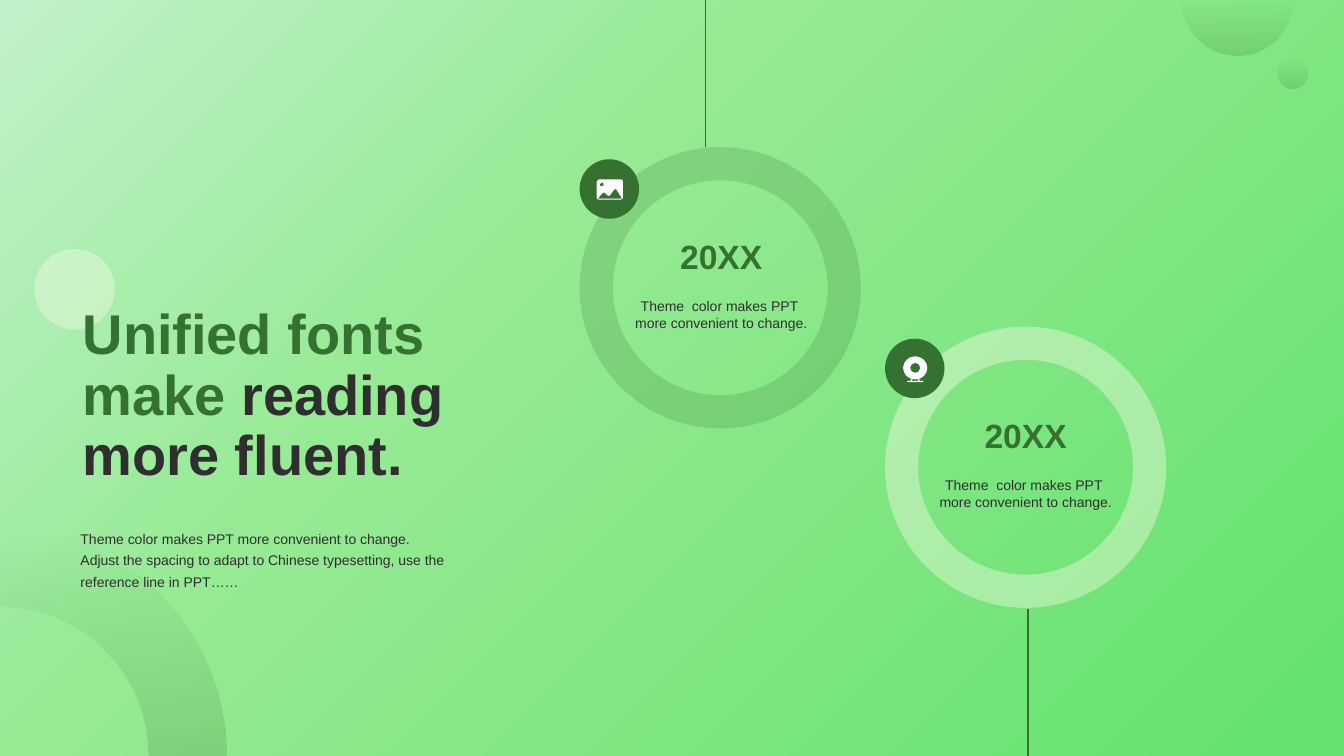
from copy import deepcopy
from dataclasses import dataclass
from math import cos, radians, sin

from lxml.etree import SubElement
from pptx import Presentation
from pptx.dml.color import RGBColor
from pptx.enum.shapes import MSO_CONNECTOR, MSO_SHAPE
from pptx.enum.text import MSO_ANCHOR, MSO_AUTO_SIZE, PP_ALIGN
from pptx.oxml.ns import qn
from pptx.util import Inches, Pt

Point = tuple[float, float]


@dataclass(frozen=True)
class Theme:
    font: str = "Arial"
    green: str = "357131"
    cream: str = "FAFBE8"
    ink: str = "2F2F2F"
    white: str = "FFFFFF"
    backdrop: tuple = ((0, "C0F1CA"), (0.37, "96EA94"), (0.98, "64E26D"))
    title_size: int = 40
    year_size: int = 24
    body_size: int = 10


THEME = Theme()


@dataclass(frozen=True)
class Contour:
    """A start and segments: one point makes a line, three make a Bezier curve."""
    start: Point
    segments: list[list[Point]]


@dataclass(frozen=True)
class Milestone:
    left: float
    top: float
    text_left: float
    ring_color: str
    ring_alpha: int
    icon: list[Contour]
    line_x: float
    line_top: float
    line_bottom: float


# Outlines
def arc(x: float, y: float, rx: float, ry: float, start: int = 0, quarters: int = 4) -> Contour:
    turn = 1 if quarters > 0 else -1
    pull = 0.5523 * turn

    def at(angle: int, tangent: float = 0) -> Point:
        c, s = cos(radians(angle)), sin(radians(angle))
        return x + rx * (c - tangent * s), y + ry * (s + tangent * c)

    angles = [start + 90 * turn * i for i in range(abs(quarters))]
    return Contour(at(start), [[at(a, pull), at(a + 90 * turn, -pull), at(a + 90 * turn)]
                               for a in angles])


def polygon(*points: Point) -> Contour:
    return Contour(points[0], [[point] for point in points[1:]])


def join(first: Contour, *others: Contour) -> Contour:
    segments = list(first.segments)
    for other in others:
        segments += [[other.start], *other.segments]
    return Contour(first.start, segments)


def rounded(half_width: float, half_height: float, r: float) -> Contour:
    x, y = half_width - r, half_height - r
    corners = ((x, y), (-x, y), (-x, -y), (x, -y))
    return join(*(arc(cx, cy, r, r, 90 * i, 1) for i, (cx, cy) in enumerate(corners)))


# Icon contours are relative to the centre of the badge; inner ones are holes
MOUNTAINS = polygon((-0.11, 0.09), (-0.11, 0.08), (-0.07, 0.035), (-0.055, 0.03),
                    (-0.015, 0.063), (0, 0.06), (0.045, 0), (0.055, -0.004),
                    (0.065, 0), (0.115, 0.08), (0.115, 0.09))
STAND = polygon((-0.035, 0.1), (-0.05, 0.12), (-0.08, 0.12), (-0.08, 0.13),
                (0.08, 0.13), (0.08, 0.12), (0.05, 0.12), (0.035, 0.1),
                (0.025, 0.1), (0.035, 0.12), (-0.035, 0.12), (-0.025, 0.1))
PHOTO_ICON = [rounded(0.13, 0.1, 0.02), MOUNTAINS, arc(-0.08, -0.05, 0.02, 0.02)]
CAMERA_ICON = [arc(0, -0.01, 0.12, 0.115), STAND, arc(0, -0.01, 0.05, 0.05),
               arc(0.06, -0.07, 0.005, 0.005)]

MILESTONES = [
    Milestone(5.75, 1.46, 6.26, THEME.green, 20, PHOTO_ICON, 7, 0, 1.46),
    Milestone(8.78, 3.24, 9.28, THEME.cream, 40, CAMERA_ICON, 10.2, 6.04, 7.5),
]


# Fills
def set_alpha(color, percent: int) -> None:
    SubElement(color, qn("a:alpha")).set("val", str(percent * 1000))


def fill_solid(shape, color: str, alpha: int = 100) -> None:
    shape.shadow.inherit = False
    shape.line.fill.background()
    shape.fill.solid()
    shape.fill.fore_color.rgb = RGBColor.from_string(color)
    if alpha < 100:
        set_alpha(shape.element.spPr.find(".//" + qn("a:srgbClr")), alpha)


def fill_gradient(fill, owner, stops, angle: int) -> None:
    fill.gradient()
    fill.gradient_angle = angle
    stop_list = owner.find(".//" + qn("a:gsLst"))
    for _ in stops[2:]:
        stop_list.append(deepcopy(stop_list[0]))
    for stop, (position, color) in zip(fill.gradient_stops, stops):
        stop.position = position
        stop.color.rgb = RGBColor.from_string(color)


def fill_fade(shape) -> None:
    shape.shadow.inherit = False
    shape.line.fill.background()
    fill_gradient(shape.fill, shape.element, ((0, THEME.green), (1, THEME.green)), 270)
    for color, alpha in zip(shape.element.spPr.iter(qn("a:srgbClr")), (0, 20)):
        set_alpha(color, alpha)


# Shapes
def add_preset(page, kind, left: float, top: float, size: float):
    return page.shapes.add_shape(kind, Inches(left), Inches(top), Inches(size), Inches(size))


def add_outline(page, contours: list[Contour], x: float = 0, y: float = 0):
    def place(point: Point):
        return Inches(x + point[0]), Inches(y + point[1])

    builder = page.shapes.build_freeform(*place(contours[0].start))
    for i, contour in enumerate(contours):
        if i:
            builder.move_to(*place(contour.start))
        builder.add_line_segments([place(p) for part in contour.segments for p in part])
    shape = builder.convert_to_shape()
    # Turn each run of three points into one curve
    lines = iter(list(shape.element.spPr.iter(qn("a:lnTo"))))
    for part in (part for contour in contours for part in contour.segments):
        group = [next(lines) for _ in part]
        if len(group) == 3:
            curve = group[0]
            curve.tag = qn("a:cubicBezTo")
            for line in group[1:]:
                curve.append(line[0])
                line.getparent().remove(line)
    return shape


def add_line(page, x: float, top: float, bottom: float) -> None:
    line = page.shapes.add_connector(MSO_CONNECTOR.STRAIGHT, Inches(x), Inches(top),
                                     Inches(x), Inches(bottom))
    line.line.color.rgb = RGBColor.from_string(THEME.green)
    line.line.width = Pt(1)
    SubElement(line.element.spPr, qn("a:effectLst"))


# Text
def write(box, paragraphs, *, size: int, bold: bool = False, align=PP_ALIGN.LEFT,
          anchor=MSO_ANCHOR.TOP, spacing: float = 1.0, wrap: bool = True,
          inset: float = 0.05, fit=MSO_AUTO_SIZE.NONE) -> None:
    frame = box.text_frame
    frame.auto_size = fit
    frame.word_wrap = wrap
    frame.vertical_anchor = anchor
    frame.margin_top = frame.margin_bottom = Inches(inset)
    for i, spans in enumerate(paragraphs):
        para = frame.add_paragraph() if i else frame.paragraphs[0]
        para.alignment = align
        para.line_spacing = spacing
        for text, color in spans:
            span = para.add_run()
            span.text = text
            span.font.name, span.font.size, span.font.bold = THEME.font, Pt(size), bold
            span.font.color.rgb = RGBColor.from_string(color)


def add_text(page, left: float, top: float, width: float, height: float,
             paragraphs, **style) -> None:
    box = page.shapes.add_textbox(Inches(left), Inches(top), Inches(width), Inches(height))
    write(box, paragraphs, **style)


def add_milestone(page, item: Milestone) -> None:
    add_line(page, item.line_x, item.line_top, item.line_bottom)
    ring = add_preset(page, MSO_SHAPE.DONUT, item.left, item.top, 2.79)
    ring.adjustments[0] = 0.118
    fill_solid(ring, item.ring_color, item.ring_alpha)
    add_text(page, item.text_left, item.top + 0.83, 1.79, 0.5, [[("20XX", THEME.green)]],
             size=THEME.year_size, bold=True, align=PP_ALIGN.CENTER,
             anchor=MSO_ANCHOR.BOTTOM, fit=MSO_AUTO_SIZE.SHAPE_TO_FIT_TEXT)
    add_text(page, item.text_left, item.top + 1.39, 1.79, 0.53,
             [[("Theme  color makes PPT ", THEME.ink)],
              [("more convenient to change.", THEME.ink)]],
             size=THEME.body_size, align=PP_ALIGN.CENTER, wrap=False, inset=0.1)
    fill_solid(add_preset(page, MSO_SHAPE.OVAL, item.left, item.top + 0.12, 0.59), THEME.green)
    fill_solid(add_outline(page, item.icon, item.left + 0.3, item.top + 0.42), THEME.white)


def main() -> None:
    deck = Presentation()
    deck.slide_width, deck.slide_height = Inches(40 / 3), Inches(7.5)
    page = deck.slides.add_slide(deck.slide_layouts[5])
    fill_gradient(page.background.fill, page.element, THEME.backdrop, 315)

    # Decorations
    quarter_ring = join(arc(0, 7.5, 2.25, 2.27, -90, 1), arc(0, 7.5, 1.47, 1.48, 0, -1))
    fill_fade(add_outline(page, [quarter_ring]))
    fill_solid(add_preset(page, MSO_SHAPE.OVAL, 0.34, 2.47, 0.8), THEME.cream, 40)
    fill_fade(add_outline(page, [arc(12.27, 0, 0.55, 0.55, 0, 2)]))
    fill_fade(add_preset(page, MSO_SHAPE.OVAL, 12.67, 0.58, 0.3))

    # Introduction
    add_text(page, 0.7, 5.16, 4.25, 0.73,
             [[("Theme color makes PPT more convenient to change.", THEME.ink)],
              [("Adjust the spacing to adapt to Chinese typesetting, "
                "use the reference line in PPT……", THEME.ink)]],
             size=THEME.body_size, spacing=1.3, fit=MSO_AUTO_SIZE.SHAPE_TO_FIT_TEXT)

    for item in MILESTONES:
        add_milestone(page, item)

    # Title, in front of the decorations
    title = page.shapes.title
    title.left, title.top = Inches(0.72), Inches(3.77)
    title.width, title.height = Inches(3.87), Inches(1.12)
    write(title, [[("Unified fonts make ", THEME.green), ("reading more fluent.", THEME.ink)]],
          size=THEME.title_size, bold=True, anchor=MSO_ANCHOR.BOTTOM, spacing=0.9)
    page.shapes.element.append(title.element)

    deck.save("out.pptx")


if __name__ == "__main__":
    main()
